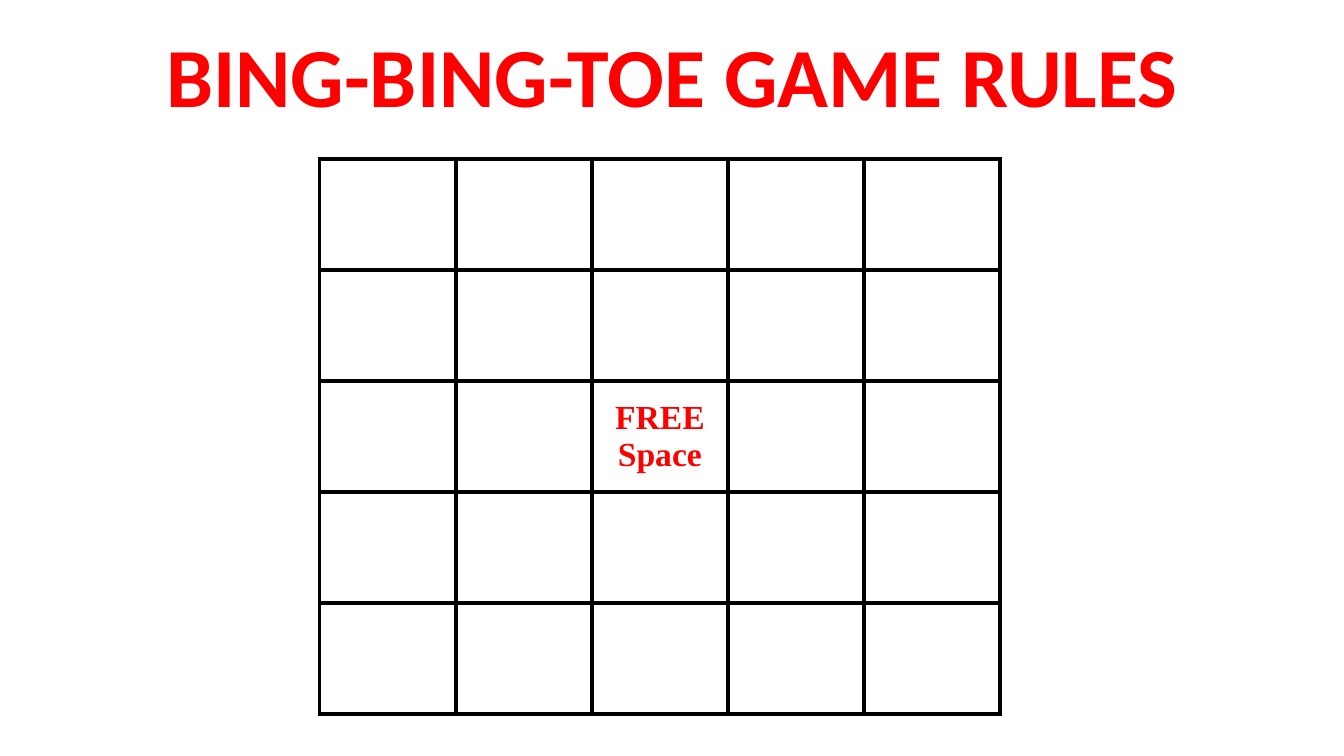
"""Build the Bing-Bing-Toe game rules slide with its five by five board."""
from dataclasses import dataclass

from lxml.etree import SubElement
from pptx import Presentation
from pptx.dml.color import RGBColor
from pptx.enum.text import MSO_ANCHOR, MSO_AUTO_SIZE, PP_ALIGN
from pptx.oxml.ns import qn
from pptx.util import Emu, Pt

SCALE = 9144
RED = RGBColor(0xFF, 0x00, 0x00)
WHITE = RGBColor(0xFF, 0xFF, 0xFF)
BLACK = RGBColor(0x00, 0x00, 0x00)
BORDER_POINTS = 3


@dataclass(frozen=True)
class TextStyle:
    font: str
    size: int
    color: RGBColor


@dataclass(frozen=True)
class Board:
    left: int
    top: int
    cell_width: int
    cell_height: int
    count: int


TITLE_STYLE = TextStyle("Calibri", 60, RED)
FREE_STYLE = TextStyle("Times New Roman", 24, RED)
BOARD = Board(left=317, top=158, cell_width=135, cell_height=110, count=5)
FREE_LINES = ("FREE", "Space")


def px(length: int) -> Emu:
    return Emu(length * SCALE)


def add_span(para, text: str, style: TextStyle) -> None:
    para.alignment = PP_ALIGN.CENTER
    span = para.add_run()
    span.text = text
    span.font.name = style.font
    span.font.size = Pt(style.size)
    span.font.bold = True
    span.font.color.rgb = style.color


def draw_title(page, text: str) -> None:
    box = page.shapes.title
    box.left, box.top, box.width, box.height = px(0), px(27), px(1333), px(105)
    box.fill.solid()
    box.fill.fore_color.rgb = WHITE
    frame = box.text_frame
    frame.word_wrap = True
    frame.auto_size = MSO_AUTO_SIZE.NONE
    frame.vertical_anchor = MSO_ANCHOR.MIDDLE
    frame.margin_left = frame.margin_right = px(30)
    frame.margin_top = frame.margin_bottom = px(20)
    para = frame.paragraphs[0]
    para.line_spacing = 0.9
    add_span(para, text, TITLE_STYLE)


def format_cell(cell) -> None:
    properties = cell._tc.get_or_add_tcPr()
    for side in ("a:lnL", "a:lnR", "a:lnT", "a:lnB"):
        line = SubElement(properties, qn(side), w=str(Pt(BORDER_POINTS)))
        paint = SubElement(line, qn("a:solidFill"))
        SubElement(paint, qn("a:srgbClr"), val=str(BLACK))
    cell.fill.solid()
    cell.fill.fore_color.rgb = WHITE


def draw_board(page, board: Board) -> None:
    table = page.shapes.add_table(
        board.count, board.count, px(board.left), px(board.top),
        px(board.cell_width * board.count), px(board.cell_height * board.count),
    ).table
    table.first_row = False
    table.horz_banding = False
    for column in table.columns:
        column.width = px(board.cell_width)
    for row in table.rows:
        row.height = px(board.cell_height)
    for cell in table.iter_cells():
        format_cell(cell)

    middle = board.count // 2
    free = table.cell(middle, middle)
    free.vertical_anchor = MSO_ANCHOR.MIDDLE
    free.margin_left = free.margin_right = px(7)
    free.margin_top = free.margin_bottom = px(0)
    frame = free.text_frame
    for index, text in enumerate(FREE_LINES):
        para = frame.add_paragraph() if index else frame.paragraphs[0]
        add_span(para, text, FREE_STYLE)


def main() -> None:
    deck = Presentation()
    deck.slide_width, deck.slide_height = px(1333), px(750)
    page = deck.slides.add_slide(deck.slide_layouts[5])
    page.background.fill.solid()
    page.background.fill.fore_color.rgb = WHITE
    draw_title(page, "BING-BING-TOE GAME RULES")
    draw_board(page, BOARD)
    deck.save("out.pptx")


if __name__ == "__main__":
    main()
